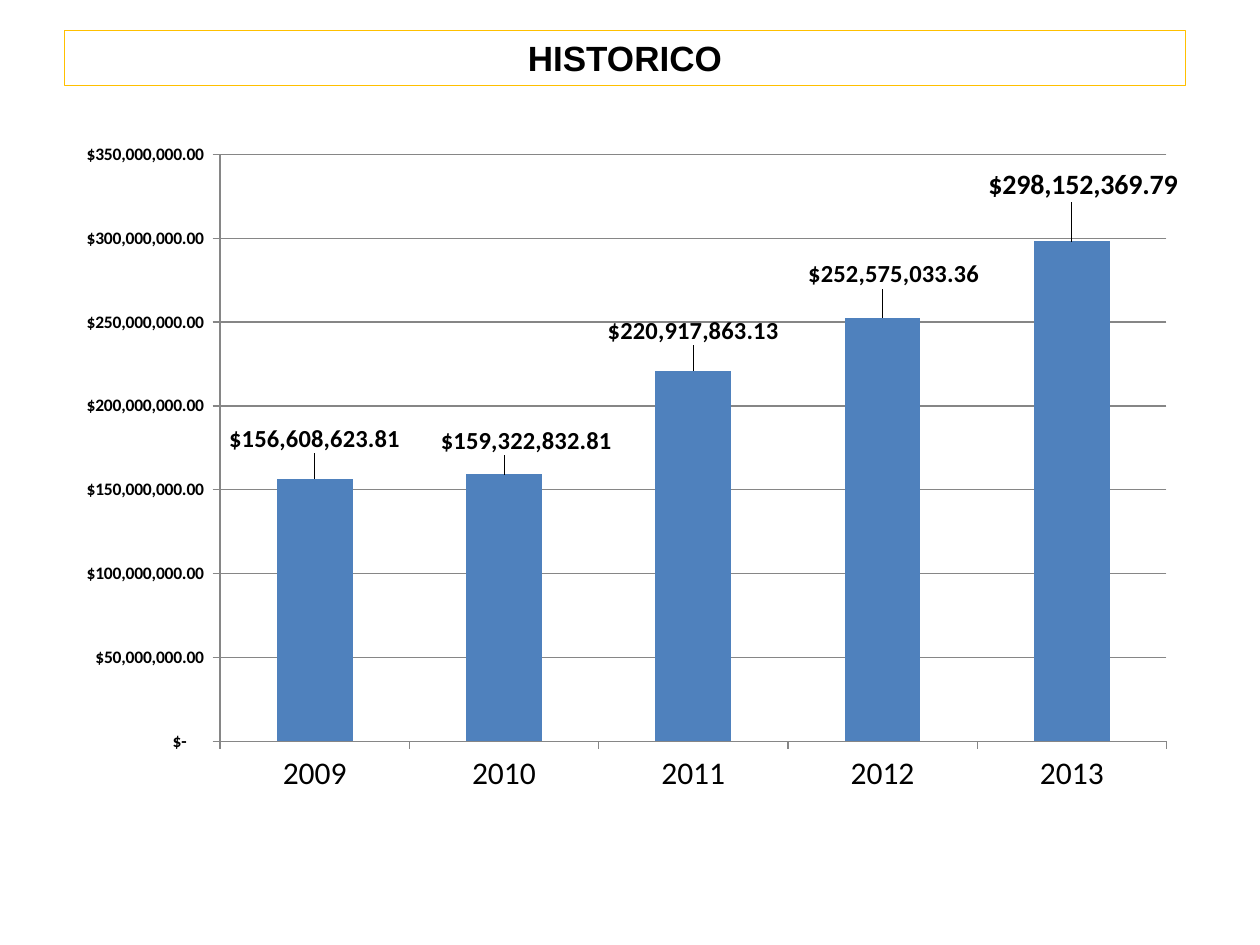
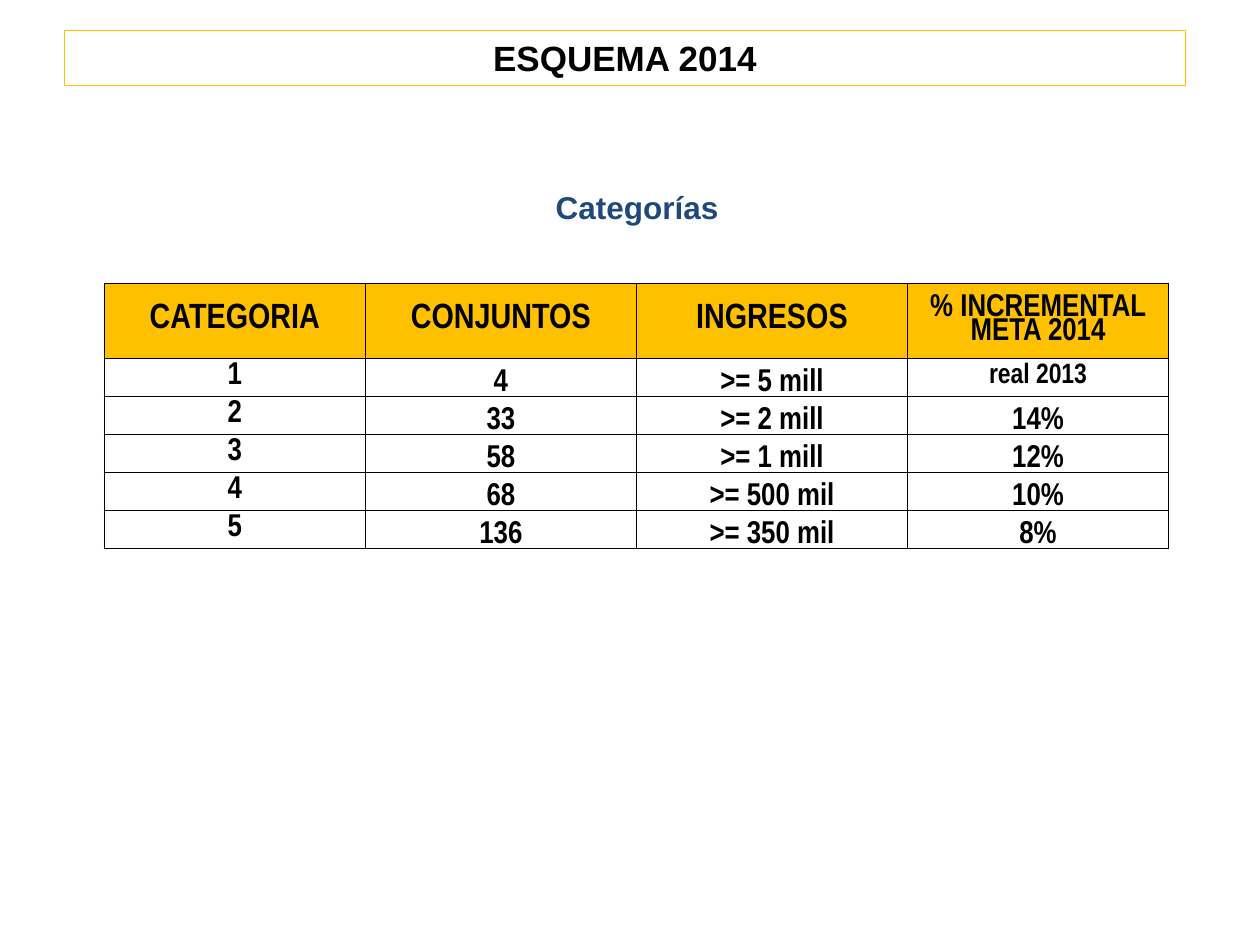
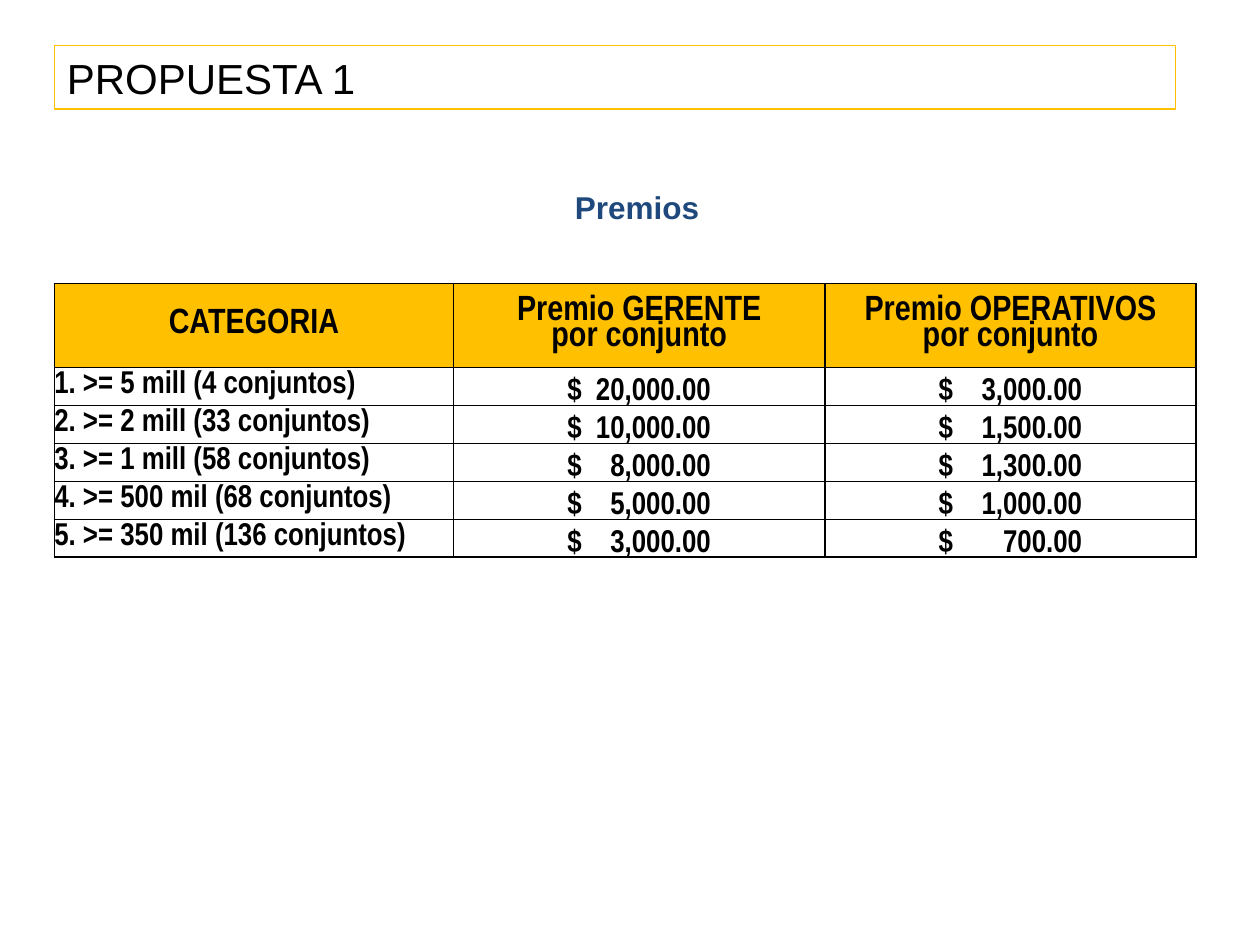
from lxml.etree import SubElement
from pptx import Presentation
from pptx.chart.data import CategoryChartData
from pptx.dml.color import RGBColor
from pptx.enum.chart import XL_CHART_TYPE as ChartType
from pptx.enum.chart import XL_LABEL_POSITION as LabelPosition
from pptx.enum.chart import XL_TICK_MARK as TickMark
from pptx.enum.text import MSO_ANCHOR as Anchor
from pptx.enum.text import PP_ALIGN as Align
from pptx.oxml import parse_xml
from pptx.oxml.ns import nsdecls, qn
from pptx.util import Pt

BLACK = RGBColor(0x00, 0x00, 0x00)
GOLD = RGBColor(0xFF, 0xC0, 0x00)
NAVY = RGBColor(0x1F, 0x49, 0x7D)
BLUE = RGBColor(0x4F, 0x81, 0xBD)
GREY = RGBColor(0x86, 0x86, 0x86)

# Content: yearly income with label size and label shift (fractions of the chart)
HISTORY = [
    ("2009", 156608623.81, 14, (0, -0.03)),
    ("2010", 159322832.81, 14, (0.02, -0.02)),
    ("2011", 220917863.13, 14, (0, -0.03)),
    ("2012", 252575033.36, 14, (0.01, -0.035)),
    ("2013", 298152369.79, 16, (0.01, -0.05)),
]
MONEY_FORMAT = '_("$"* #,##0.00_);_("$"* \\(#,##0.00\\);_("$"* "-"??_);_(@_)'
PLOT_AREA = {"x": 0.139, "y": 0.044, "w": 0.844, "h": 0.871}

CATEGORIES = [
    ("CATEGORIA", "CONJUNTOS", "INGRESOS", "% INCREMENTAL META 2014"),
    ("1", "4", ">= 5 mill", "real 2013"),
    ("2", "33", ">= 2 mill", "14%"),
    ("3", "58", ">= 1 mill", "12%"),
    ("4", "68", ">= 500 mil", "10%"),
    ("5", "136", ">= 350 mil", "8%"),
]
PRIZES = [
    ("CATEGORIA", "Premio GERENTE\npor conjunto", "Premio OPERATIVOS\npor conjunto"),
    ("1. >= 5 mill (4 conjuntos)", "$\t20,000.00", "$\t3,000.00"),
    ("2. >= 2 mill (33 conjuntos)", "$\t10,000.00", "$\t1,500.00"),
    ("3. >= 1 mill (58 conjuntos)", "$\t8,000.00", "$\t1,300.00"),
    ("4. >= 500 mil (68 conjuntos)", "$\t5,000.00", "$\t1,000.00"),
    ("5. >= 350 mil (136 conjuntos)", "$\t3,000.00", "$\t700.00"),
]
SPECIAL_SIZES = {"% INCREMENTAL META 2014": 18, "real 2013": 16}

# Shared layout, in points
TITLE_BOX = (36.7, 17.3, 640.8, 31.7)
PROPOSAL_BOX = (31, 25.9, 640.8, 36.4)
CHART_BOX = (36.7, 71.3, 640.8, 385.2)
SUBTITLE_BOX = (31, 103.7, 666, 28.8)
TABLE_TOP = 162
BODY_ROW = 21.7
AMOUNT_LEFT, AMOUNT_WIDTH = 65, 82


def points(values):
    return [Pt(value) for value in values]


def style_font(font, size, name="Arial", bold=True, color=BLACK):
    font.size, font.name, font.bold = Pt(size), name, bold
    font.color.rgb = color


def add_titled_slide(presentation, text, box=TITLE_BOX, size=20, bold=True, align=Align.CENTER):
    slide = presentation.slides.add_slide(presentation.slide_layouts[5])
    title = slide.shapes.title
    title.left, title.top, title.width, title.height = points(box)
    title.line.color.rgb = GOLD
    title.line.width = Pt(0.75)
    title.text_frame.text = text
    title.text_frame.vertical_anchor = Anchor.MIDDLE
    paragraph = title.text_frame.paragraphs[0]
    paragraph.alignment = align
    style_font(paragraph.font, size, bold=bold)
    return slide


def add_subtitle(slide, text):
    frame = slide.shapes.add_textbox(*points(SUBTITLE_BOX)).text_frame
    frame.word_wrap = True
    frame.text = text
    paragraph = frame.paragraphs[0]
    paragraph.alignment = Align.CENTER
    style_font(paragraph.font, 18, color=NAVY)


def manual_layout(positions, inner=False):
    target = '<c:layoutTarget val="inner"/>' if inner else ""
    modes = '<c:xMode val="edge"/><c:yMode val="edge"/>' if inner else ""
    values = "".join(f'<c:{key} val="{value}"/>' for key, value in positions.items())
    return parse_xml(f'<c:layout {nsdecls("c")}><c:manualLayout>{target}{modes}{values}'
                     "</c:manualLayout></c:layout>")


def add_history_chart(slide):
    data = CategoryChartData(number_format=MONEY_FORMAT)
    data.categories = [year for year, *_ in HISTORY]
    data.add_series("Series 1", [income for _, income, *_ in HISTORY])
    chart = slide.shapes.add_chart(ChartType.COLUMN_CLUSTERED, *points(CHART_BOX), data).chart
    chart.has_legend = chart.has_title = False
    style_font(chart.font, 10, "Calibri", bold=False)

    # Plot area and axes
    plot_area = chart.plots[0]._element.getparent()
    for layout in plot_area.findall(qn("c:layout")):
        plot_area.remove(layout)
    plot_area.insert(0, manual_layout(PLOT_AREA, inner=True))
    years, amounts = chart.category_axis, chart.value_axis
    style_font(years.tick_labels.font, 18, "Calibri", bold=False)
    style_font(amounts.tick_labels.font, 10, "Calibri")
    amounts.tick_labels.number_format = MONEY_FORMAT
    amounts.tick_labels.number_format_is_linked = False
    amounts.minimum_scale, amounts.maximum_scale, amounts.major_unit = 0, 350e6, 50e6
    amounts.has_major_gridlines = True
    for axis in (years, amounts):
        axis.major_tick_mark = TickMark.OUTSIDE
    for line in (years.format.line, amounts.format.line, amounts.major_gridlines.format.line):
        line.color.rgb = GREY
        line.width = Pt(0.75)

    # Columns and their labels
    plot = chart.plots[0]
    plot.gap_width = 150
    plot.vary_by_categories = False
    series = plot.series[0]
    series.format.fill.solid()
    series.format.fill.fore_color.rgb = BLUE
    labels = series.data_labels
    labels.show_value = True
    labels.number_format = MONEY_FORMAT
    labels.number_format_is_linked = False
    style_font(labels.font, 14, "Calibri")
    for index, (_, _, size, (shift_x, shift_y)) in enumerate(HISTORY):
        label = series.points[index].data_label
        style_font(label.font, size, "Calibri")
        label.position = LabelPosition.OUTSIDE_END
        element = labels._element.findall(qn("c:dLbl"))[index]
        element.insert(1, manual_layout({"x": shift_x, "y": shift_y}))
        number_format = SubElement(element, qn("c:numFmt"), formatCode=MONEY_FORMAT, sourceLinked="0")
        element.insert(2, number_format)


def add_borders(cell):
    properties = cell._tc.get_or_add_tcPr()
    for side in ("lnL", "lnR", "lnT", "lnB"):
        line = SubElement(properties, qn(f"a:{side}"), w=str(Pt(1)))
        SubElement(SubElement(line, qn("a:solidFill")), qn("a:srgbClr"), val=str(BLACK))


def fill_cell(cell, text, is_header, is_first):
    is_amount = "\t" in text
    cell.text = text
    cell.margin_left = Pt(AMOUNT_LEFT if is_amount else 0)
    cell.margin_right = cell.margin_top = cell.margin_bottom = 0
    centered = is_header or is_first or text in SPECIAL_SIZES
    cell.vertical_anchor = Anchor.MIDDLE if centered else Anchor.BOTTOM
    add_borders(cell)
    if is_header:
        cell.fill.solid()
        cell.fill.fore_color.rgb = GOLD
    else:
        cell.fill.background()
    size = SPECIAL_SIZES.get(text, 20 if is_header else 18)
    for paragraph in cell.text_frame.paragraphs:
        if is_amount:
            tabs = SubElement(paragraph._p.get_or_add_pPr(), qn("a:tabLst"))
            SubElement(tabs, qn("a:tab"), pos=str(Pt(AMOUNT_WIDTH)), algn="r")
        left = is_amount or "conjuntos)" in text
        paragraph.alignment = Align.LEFT if left else Align.CENTER
        paragraph.line_spacing = 0.8
        style_font(paragraph.font, size, "Arial Narrow")


def add_grid(slide, rows, left, widths, header_height):
    heights = [header_height] + [BODY_ROW] * (len(rows) - 1)
    box = points((left, TABLE_TOP, sum(widths), sum(heights)))
    table = slide.shapes.add_table(len(rows), len(widths), *box).table
    table.first_row = table.horz_banding = False
    for column, width in zip(table.columns, widths):
        column.width = Pt(width)
    for row_index, (row, height) in enumerate(zip(rows, heights)):
        table.rows[row_index].height = Pt(height)
        for column_index, text in enumerate(row):
            fill_cell(table.cell(row_index, column_index), text, row_index == 0, column_index == 0)


def main():
    presentation = Presentation()
    presentation.slide_width, presentation.slide_height = Pt(720), Pt(540)

    # Income history
    add_history_chart(add_titled_slide(presentation, "HISTORICO"))

    # Category scheme
    slide = add_titled_slide(presentation, "ESQUEMA 2014")
    add_subtitle(slide, "Categorías")
    add_grid(slide, CATEGORIES, 59.6, [149.2, 154.9, 154.9, 149.2], 42.9)

    # Prize proposal
    slide = add_titled_slide(presentation, "PROPUESTA 1", PROPOSAL_BOX, 24, False, Align.LEFT)
    add_subtitle(slide, "Premios")
    add_grid(slide, PRIZES, 31, [228.2, 212.2, 212.2], 48)

    presentation.save("out.pptx")


if __name__ == "__main__":
    main()
